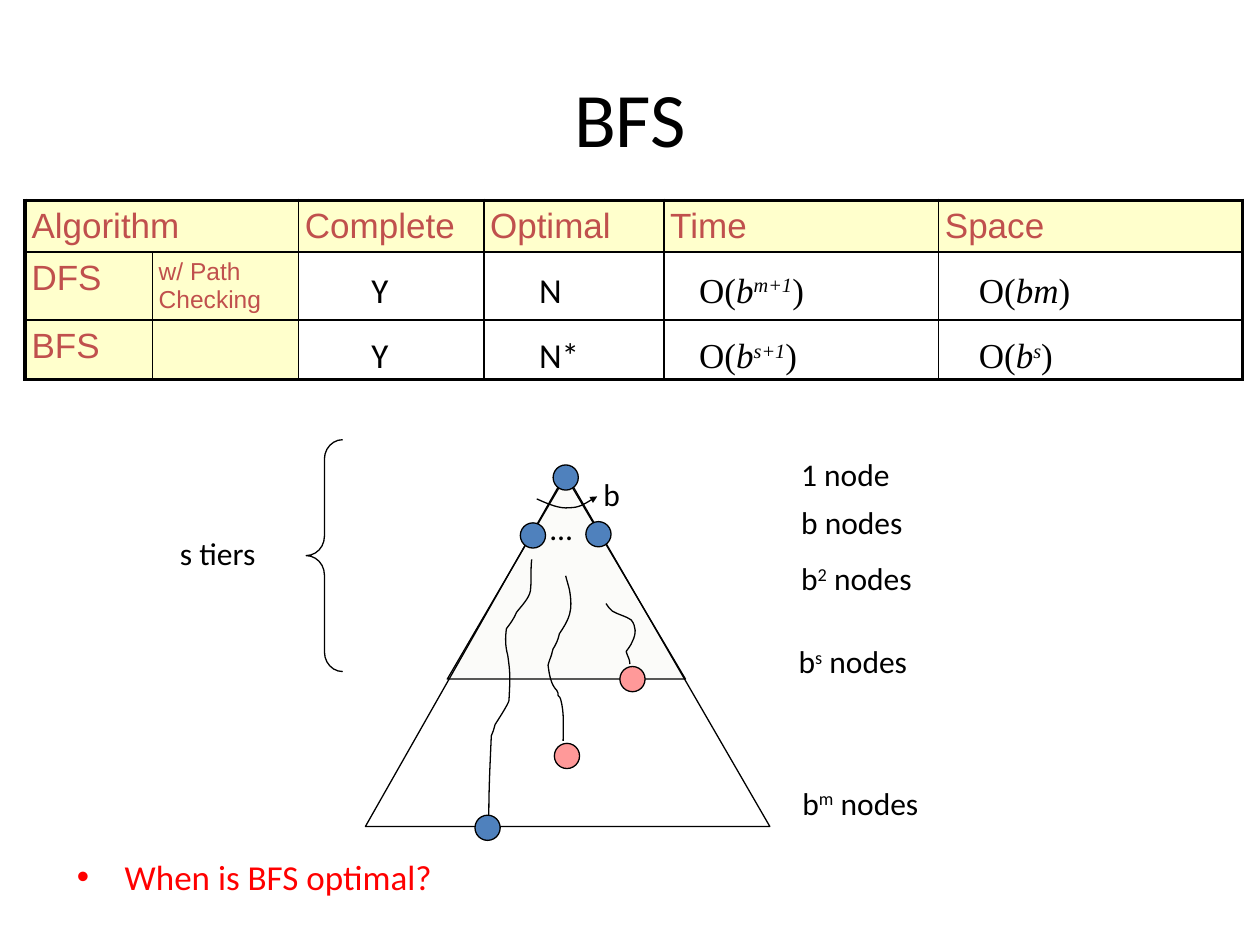
from lxml import etree
from pptx import Presentation, util as u
from pptx.dml.color import RGBColor
from pptx.enum import shapes, text
from pptx.oxml.ns import qn

BLACK = RGBColor(0, 0, 0)
RED = RGBColor(0xFF, 0, 0)
BRICK = RGBColor(0xC0, 0x50, 0x4D)
CREAM = RGBColor(0xFF, 0xFF, 0xCC)
BLUE = RGBColor(0x4F, 0x81, 0xBD)
PINK = RGBColor(0xFF, 0x99, 0x99)
IVORY = RGBColor(0xEE, 0xEC, 0xE1)

NODE = 0.2
THIN, THICK = 1, 2.25
SERIF = "Times New Roman"


def write(frame, pieces, size=18, font="Calibri", color=BLACK):
    """Fill a frame with one paragraph; a piece is text or (text, marks): i italic, ^ raised."""
    paragraph = frame.paragraphs[0]
    for piece in [pieces] if isinstance(pieces, str) else pieces:
        words, marks = (piece, "") if isinstance(piece, str) else piece
        run = paragraph.add_run()
        run.text = words
        run.font.size, run.font.name = u.Pt(size), font
        run.font.color.rgb = color
        if "i" in marks:
            run.font.italic = True
        if "^" in marks:
            run.font._element.set("baseline", "30000")
    return paragraph


def label(slide, left, top, width, pieces, height=0.4, **style):
    box = slide.shapes.add_textbox(*map(u.Inches, (left, top, width, height)))
    box.text_frame.word_wrap = True
    write(box.text_frame, pieces, **style)


def outline(shape, fill=None):
    shape.shadow.inherit = False
    shape.line.color.rgb, shape.line.width = BLACK, u.Pt(0.75)
    if fill is None:
        shape.fill.background()
    else:
        shape.fill.solid()
        shape.fill.fore_color.rgb = fill
    return shape


def preset(slide, kind, left, top, width, height, fill=None):
    return outline(slide.shapes.add_shape(
        kind, *map(u.Inches, (left, top, width, height))), fill)


def node(slide, left, top, fill):
    preset(slide, shapes.MSO_SHAPE.OVAL, left, top, NODE, NODE, fill)


def freeform(slide, points, close=False, fill=None):
    start, *rest = [(u.Inches(x), u.Inches(y)) for x, y in points]
    builder = slide.shapes.build_freeform(*start)
    builder.add_line_segments(rest, close=close)
    return outline(builder.convert_to_shape(), fill)


def curve(slide, points):
    """Open line of cubic Béziers: a start, then two controls and an end for each."""
    shape = freeform(slide, points)
    segments = list(shape._element.iter(qn("a:lnTo")))
    for i in range(0, len(segments), 3):
        bezier = etree.Element(qn("a:cubicBezTo"))
        segments[i].addprevious(bezier)
        for segment in segments[i:i + 3]:
            bezier.append(segment[0])
            segment.getparent().remove(segment)
    return shape


def set_borders(cell, **widths):
    properties = cell._tc.get_or_add_tcPr()
    for side in "LRTB":
        line = etree.SubElement(properties, qn(f"a:ln{side}"), w=str(u.Pt(widths[side])))
        fill = etree.SubElement(line, qn("a:solidFill"))
        etree.SubElement(fill, qn("a:srgbClr"), val=str(BLACK))


def comparison_table(slide):
    columns, rows = [1.01, 1.16, 1.47, 1.43, 2.18, 2.41], [0.41, 0.54, 0.47]
    names = [["Algorithm", "", "Complete", "Optimal", "Time", "Space"],
             ["DFS", "w/ Path Checking"], ["BFS"]]
    table = slide.shapes.add_table(
        len(rows), len(columns),
        *map(u.Inches, (0.2, 1.59, sum(columns), sum(rows)))).table
    table.first_row = table.horz_banding = False
    for column, width in zip(table.columns, columns):
        column.width = u.Inches(width)
    last_row, last_column = len(rows) - 1, len(columns) - 1
    for r, height in enumerate(rows):
        table.rows[r].height = u.Inches(height)
        for c in range(len(columns)):
            cell = table.cell(r, c)
            cell.margin_left = cell.margin_top = cell.margin_bottom = u.Inches(0.05)
            cell.margin_right = 0
            set_borders(cell, L=THIN if c else THICK, T=THIN if r else THICK,
                        R=THICK if c == last_column else THIN,
                        B=THICK if r == last_row else THIN)
            if r == 0 or c < 2:
                cell.fill.solid()
                cell.fill.fore_color.rgb = CREAM
            else:
                cell.fill.background()
            if c < len(names[r]) and names[r][c]:
                write(cell.text_frame, names[r][c], size=14 if r and c else 20,
                      font="Arial", color=BRICK)
    table.cell(0, 0).merge(table.cell(0, 1))


def table_values(slide):
    columns = [(2.85, 0.67, "Calibri"), (4.18, 0.67, "Calibri"),
               (5.45, 2.08, SERIF), (7.67, 1.5, SERIF)]
    results = {
        2.08: ["Y", "N", ["O(", ("b", "i"), ("m+1", "i^"), ")"], ["O(", ("bm", "i"), ")"]],
        2.6: ["Y", "N*", ["O(", ("b", "i"), ("s+1", "i^"), ")"],
              ["O(", ("b", "i"), ("s", "i^"), ")"]],
    }
    for top, values in results.items():
        for (left, width, font), value in zip(columns, values):
            label(slide, left, top, width, value, height=0.43, size=20, font=font)


def search_tree(slide):
    # Whole tree, with its outline over the explored tiers
    freeform(slide, [(2.9, 6.56), (6.11, 6.56), (4.49, 3.76)], True)

    # Root, its children and the branching factor
    for left, top in [(4.39, 3.69), (4.13, 4.15), (4.65, 4.14)]:
        node(slide, left, top, BLUE)
    label(slide, 4.27, 3.99, 0.3, "…")
    arc = curve(slide, [(4.26, 3.96), (4.35, 4), (4.44, 4.04), (4.52, 4.03),
                        (4.6, 4.03), (4.67, 3.98), (4.74, 3.94)])
    etree.SubElement(arc.line._get_or_add_ln(), qn("a:tailEnd"),
                     type="triangle", w="sm", len="sm")
    label(slide, 4.69, 3.72, 0.33, "b")

    # Deepest node and the two goals
    for left, top, fill in [(3.77, 6.47, BLUE), (4.92, 5.29, PINK), (4.4, 5.9, PINK)]:
        node(slide, left, top, fill)

    # Search paths
    curve(slide, [(4.22, 4.44), (4.21, 4.53), (4.22, 4.61), (4.21, 4.69),
                  (4.2, 4.75), (4.13, 4.82), (4.1, 4.86),
                  (4.08, 4.91), (4.05, 4.95), (4.02, 4.99),
                  (4.01, 5.06), (4.01, 5.13), (4.03, 5.2),
                  (4.05, 5.34), (4.05, 5.37), (4.04, 5.56),
                  (4.04, 5.58), (3.95, 5.72), (3.93, 5.75),
                  (3.91, 5.82), (3.92, 5.79), (3.9, 5.84),
                  (3.89, 6.07), (3.88, 6.25), (3.88, 6.47)])
    curve(slide, [(4.49, 4.57), (4.5, 4.61), (4.51, 4.64), (4.52, 4.68),
                  (4.55, 4.85), (4.52, 4.91), (4.44, 5.03),
                  (4.43, 5.08), (4.41, 5.12), (4.39, 5.15),
                  (4.37, 5.22), (4.39, 5.16), (4.37, 5.22),
                  (4.36, 5.24), (4.35, 5.28), (4.35, 5.28),
                  (4.36, 5.35), (4.37, 5.43), (4.42, 5.48),
                  (4.43, 5.49), (4.43, 5.51), (4.43, 5.52),
                  (4.44, 5.53), (4.45, 5.54), (4.45, 5.55),
                  (4.48, 5.66), (4.47, 5.76), (4.47, 5.88)])
    curve(slide, [(4.81, 4.79), (4.82, 4.81), (4.84, 4.83), (4.86, 4.85),
                  (4.91, 4.88), (4.97, 4.89), (5.01, 4.92),
                  (5.05, 4.97), (5.05, 5.03), (5.02, 5.09),
                  (5.01, 5.12), (4.97, 5.17), (4.97, 5.17),
                  (4.98, 5.21), (5, 5.23), (5, 5.27)])


def explored_tiers(slide):
    explored = freeform(slide, [(4.49, 3.78), (3.55, 5.39), (5.44, 5.39)], True, IVORY)
    shade = explored._element.spPr.find(qn("a:solidFill"))[0]
    etree.SubElement(shade, qn("a:alpha"), val="20000")


def tier_labels(slide):
    brace = preset(slide, shapes.MSO_SHAPE.LEFT_BRACE, 2.43, 3.49, 0.29, 1.84)
    brace.adjustments[0] = 0.53
    label(slide, 1.33, 4.19, 1.38, "s tiers")
    for left, top, width, count in [(6.26, 3.56, 1.22, "1 node"),
                                    (6.26, 3.94, 1.22, "b nodes"),
                                    (6.26, 4.39, 1.22, ["b", ("2", "^"), " nodes"]),
                                    (6.24, 5.05, 1.6, ["b", ("s", "^"), " nodes"]),
                                    (6.27, 6.17, 1.6, ["b", ("m", "^"), " nodes"])]:
        label(slide, left, top, width, count)


def place(holder, left, top, width, height):
    holder.left, holder.top, holder.width, holder.height = map(
        u.Inches, (left, top, width, height))
    return holder.text_frame


def main():
    deck = Presentation()
    deck.slide_width, deck.slide_height = u.Inches(10), u.Inches(7.5)
    slide = deck.slides.add_slide(deck.slide_layouts[1])
    title, question = slide.placeholders

    # Title, and the closing question at the foot of the body
    heading = write(place(title, 0.5, 0.3, 9, 1.25), "BFS", size=44)
    heading.alignment = text.PP_ALIGN.CENTER
    body = place(question, 0.51, 1.58, 9, 5.74)
    body.vertical_anchor, body.margin_bottom = text.MSO_ANCHOR.BOTTOM, u.Inches(0.2)
    bullet = write(body, "When is BFS optimal?", size=20, color=RED)
    bullet.line_spacing = 0.8
    indent = bullet._p.get_or_add_pPr()
    indent.set("marL", str(u.Inches(0.38)))
    indent.set("indent", str(-u.Inches(0.38)))

    explored_tiers(slide)
    comparison_table(slide)
    table_values(slide)
    search_tree(slide)
    tier_labels(slide)
    deck.save("out.pptx")


if __name__ == "__main__":
    main()
